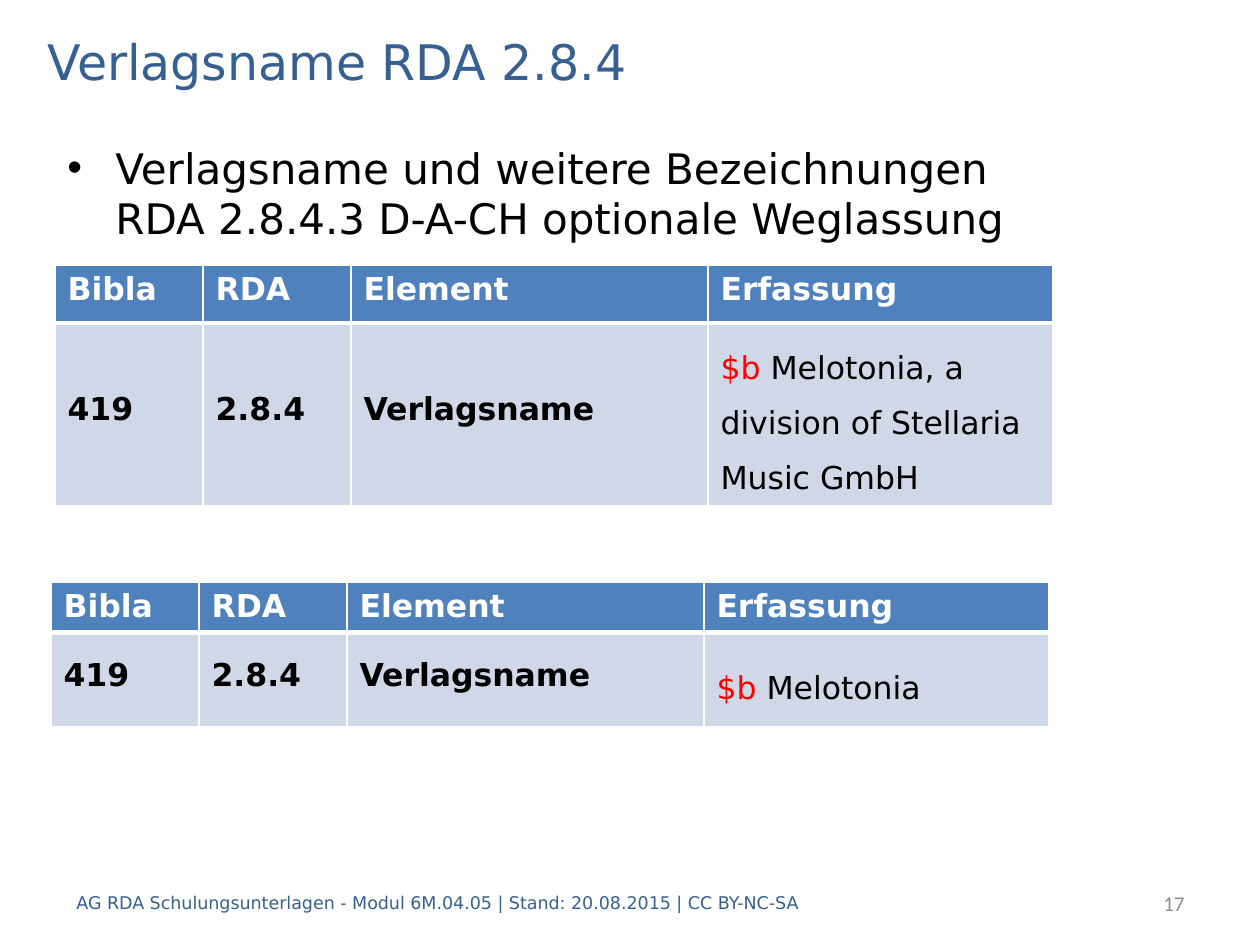
from pptx import Presentation, util as u
from pptx.dml.color import RGBColor
from pptx.enum import text
from pptx.oxml.ns import qn
from lxml import etree

SCALE = 914400 / 126
FONT = "DejaVu Sans"
COLORS = {
    "title": "376092", "body": "000000", "number": "8C8C8C", "code": "FF0000",
    "head": "4F81BD", "row": "D0D8E8", "white": "FFFFFF",
}
COLUMNS = (148, 148, 357, 345)
HEADINGS = ("Bibla", "RDA", "Element", "Erfassung")
FIELD = ("419", "2.8.4", "Verlagsname")


def px(n):
    return u.Emu(round(n * SCALE))


def add_run(p, words, size, color, bold=False, font=FONT):
    r = p.add_run()
    r.text = words
    r.font.size, r.font.bold, r.font.name = u.Pt(size), bold, font
    r.font.color.rgb = RGBColor.from_string(COLORS[color])


def add_box(s, box, anchor=text.MSO_ANCHOR.MIDDLE):
    tf = s.shapes.add_textbox(*map(px, box)).text_frame
    tf.word_wrap = True
    tf.vertical_anchor = anchor
    return tf.paragraphs[0]


def add_title(s, box):
    add_run(add_box(s, box), "Verlagsname RDA 2.8.4", 28, "title")


def add_bullet(s, box):
    p = add_box(s, box, text.MSO_ANCHOR.TOP)
    p.space_before = u.Pt(4.8)
    pPr = p._p.get_or_add_pPr()
    pPr.set("marL", str(px(48)))
    pPr.set("indent", str(-px(48)))
    etree.SubElement(pPr, qn("a:buFont")).set("typeface", "Arial")
    etree.SubElement(pPr, qn("a:buChar")).set("char", "•")
    add_run(p, "Verlagsname und weitere Bezeichnungen", 24, "body")
    p.add_line_break()
    add_run(p, "RDA 2.8.4.3 D-A-CH optionale Weglassung", 24, "body")


def style_cell(cell, fill, top, bottom):
    # Borders come before the fill in the cell properties
    tcPr = cell._tc.get_or_add_tcPr()
    for side, width in (("L", 1), ("R", 1), ("T", top), ("B", bottom)):
        ln = etree.SubElement(tcPr, qn(f"a:ln{side}"), w=str(u.Pt(width)))
        solid = etree.SubElement(ln, qn("a:solidFill"))
        etree.SubElement(solid, qn("a:srgbClr"), val=COLORS["white"])
    cell.fill.solid()
    cell.fill.fore_color.rgb = RGBColor.from_string(COLORS[fill])


def add_field_table(s, left, top, heights, publisher):
    frame = s.shapes.add_table(2, len(COLUMNS), px(left), px(top),
                               px(sum(COLUMNS)), px(sum(heights)))
    table = frame.table
    for row, height in zip(table.rows, heights):
        row.height = px(height)
    for i, width in enumerate(COLUMNS):
        table.columns[i].width = px(width)
        head, cell = table.cell(0, i), table.cell(1, i)

        # Heading row
        style_cell(head, "head", 1, 3)
        add_run(head.text_frame.paragraphs[0], HEADINGS[i], 18, "white", True)

        # Field row
        style_cell(cell, "row", 3, 1)
        cell.vertical_anchor = text.MSO_ANCHOR.MIDDLE
        p = cell.text_frame.paragraphs[0]
        p.space_before = p.space_after = u.Pt(6)
        if i < len(FIELD):
            p.line_spacing = u.Pt(16)
            add_run(p, FIELD[i], 18, "body", True)
        else:
            p.line_spacing = 1.5
            add_run(p, "$b", 18, "code")
            add_run(p, f" {publisher}", 18, "body")


def add_footer(s, left, top, height):
    p = add_box(s, (left, top, 1052, height))
    add_run(p, "AG RDA Schulungsunterlagen - Modul 6M.04.05 | "
               "Stand: 20.08.2015 | CC BY-NC-SA", 10, "title")
    p = add_box(s, (left + 933, top, 200, height))
    p.alignment = text.PP_ALIGN.RIGHT
    add_run(p, "17", 12, "number", font="Calibri")


def main():
    prs = Presentation()
    prs.slide_width, prs.slide_height = px(1260), px(945)
    s = prs.slides.add_slide(prs.slide_layouts[6])
    add_title(s, (35, 25, 1191, 71))
    add_footer(s, 64, 878, 50)
    add_bullet(s, (55, 136, 1191, 89))
    add_field_table(s, 55, 265, (58, 176),
                    "Melotonia, a division of Stellaria Music GmbH")
    add_field_table(s, 51, 582, (49, 94), "Melotonia")
    prs.save("out.pptx")


if __name__ == "__main__":
    main()
